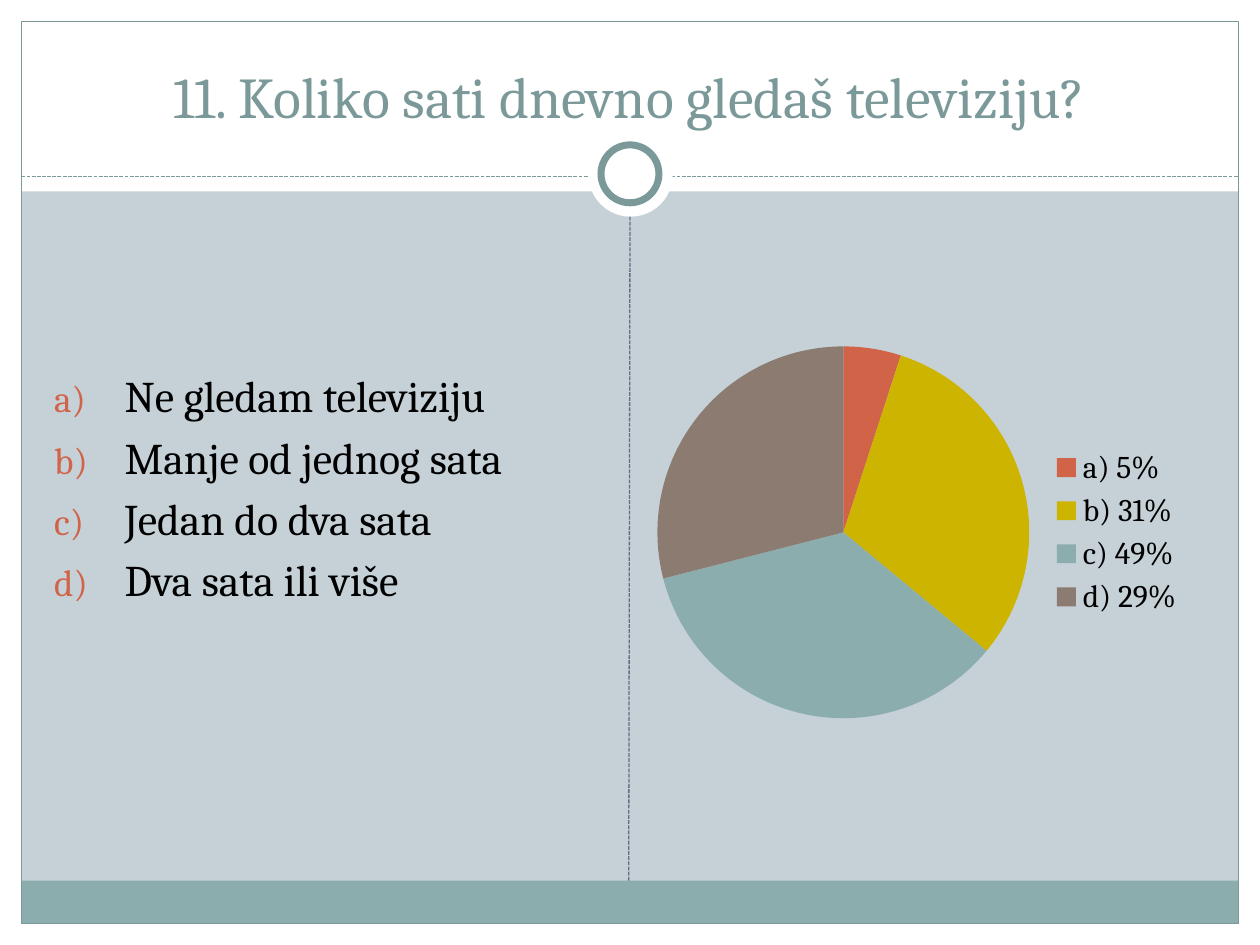
from lxml.etree import SubElement
from pptx import Presentation
from pptx.chart.data import CategoryChartData
from pptx.dml.color import RGBColor
from pptx.enum.chart import XL_CHART_TYPE as ChartType, XL_LEGEND_POSITION as LegendPosition
from pptx.enum.dml import MSO_LINE
from pptx.enum.shapes import MSO_CONNECTOR, MSO_SHAPE as Shape
from pptx.enum.text import MSO_ANCHOR, MSO_AUTO_SIZE, PP_ALIGN
from pptx.oxml.ns import qn
from pptx.util import Inches, Pt

WHITE = RGBColor(0xFF, 0xFF, 0xFF)
BLACK = RGBColor(0x00, 0x00, 0x00)
BACKGROUND = RGBColor(0xC5, 0xD1, 0xD7)
TEAL = RGBColor(0x8C, 0xAD, 0xAE)
DARK_TEAL = RGBColor(0x7C, 0x99, 0x9A)
SLATE = RGBColor(0x64, 0x6B, 0x86)
RED = RGBColor(0xD1, 0x63, 0x49)
YELLOW = RGBColor(0xCC, 0xB4, 0x00)
BROWN = RGBColor(0x8C, 0x7B, 0x70)
FONT = "Cambria"

TITLE = "11. Koliko sati dnevno gledaš televiziju?"
ANSWERS = ["Ne gledam televiziju", "Manje od jednog sata", "Jedan do dva sata", "Dva sata ili više"]
SLICES = [("a) 5%", 5, RED), ("b) 31%", 31, YELLOW), ("c) 49%", 35, TEAL), ("d) 29%", 29, BROWN)]

WIDTH, HEIGHT, MARGIN = 10, 7.5, 0.17
INNER_WIDTH = WIDTH - 2 * MARGIN
FOOTER_TOP, RULE_TOP = 6.99, 1.4
BOTTOM = HEIGHT - MARGIN

FRAME = [
    (Shape.RECTANGLE, (0, BOTTOM, WIDTH, MARGIN), WHITE, None, 0),
    (Shape.RECTANGLE, (0, 0, WIDTH, 1.52), WHITE, None, 0),
    (Shape.RECTANGLE, (0, 0, MARGIN, HEIGHT), WHITE, None, 0),
    (Shape.RECTANGLE, (WIDTH - MARGIN, 0, MARGIN, HEIGHT), WHITE, None, 0),
    (Shape.RECTANGLE, (MARGIN, FOOTER_TOP, INNER_WIDTH, BOTTOM - FOOTER_TOP), TEAL, None, 0),
    (Shape.RECTANGLE, (MARGIN, MARGIN, INNER_WIDTH, BOTTOM - MARGIN), None, DARK_TEAL, 0.75),
]
RING = [
    (Shape.OVAL, (4.67, 1.05, 0.67, 0.67), WHITE, None, 0),
    (Shape.OVAL, (4.77, 1.15, 0.46, 0.46), WHITE, DARK_TEAL, 4),
]


def place(box, area):
    for name, value in zip(("left", "top", "width", "height"), area):
        setattr(box, name, Inches(value))


def set_font(font, size, color):
    for name, value in {"name": FONT, "size": Pt(size), "bold": False}.items():
        setattr(font, name, value)
    font.color.rgb = color


def add_block(page, kind, area, fill, line, weight):
    block = page.shapes.add_shape(kind, *map(Inches, area))
    block.shadow.inherit = False
    if fill is None:
        block.fill.background()
    else:
        block.fill.solid()
        block.fill.fore_color.rgb = fill
    if line is None:
        block.line.fill.background()
    else:
        block.line.color.rgb = line
        block.line.width = Pt(weight)


def add_dashed_line(page, ends, color):
    rule = page.shapes.add_connector(MSO_CONNECTOR.STRAIGHT, *map(Inches, ends))
    rule.line.color.rgb = color
    rule.line.width = Pt(0.75)
    rule.line.dash_style = MSO_LINE.SQUARE_DOT
    SubElement(rule.element.spPr, qn("a:effectLst"))


def write_lines(box, lines, anchor, align, size, color):
    frame = box.text_frame
    frame.text = "\n".join(lines)
    for name, value in {"word_wrap": True, "auto_size": MSO_AUTO_SIZE.NONE, "vertical_anchor": anchor}.items():
        setattr(frame, name, value)
    for para in frame.paragraphs:
        para.alignment = align
        for span in para.runs:
            set_font(span.font, size, color)


def add_letter(para):
    para.space_before = Pt(5)
    properties = para._p.get_or_add_pPr()
    properties.set("marL", str(Inches(0.56)))
    properties.set("indent", str(-Inches(0.56)))
    bullet_color = SubElement(properties, qn("a:buClr"))
    SubElement(bullet_color, qn("a:srgbClr"), val=str(RED))
    SubElement(properties, qn("a:buSzPct"), val="85000")
    SubElement(properties, qn("a:buFont"), typeface=FONT)
    SubElement(properties, qn("a:buAutoNum"), type="alphaLcParenR")


def add_pie(page, area):
    data = CategoryChartData()
    data.categories = [label for label, _, _ in SLICES]
    data.add_series("Series 1", [value for _, value, _ in SLICES])
    chart = page.shapes.add_chart(ChartType.PIE, *map(Inches, area), data).chart
    chart.has_title = False
    set_font(chart.font, 18, BLACK)
    chart.has_legend = True
    chart.legend.position = LegendPosition.RIGHT
    chart.legend.include_in_layout = False
    plot = chart.plots[0]
    plot.vary_by_categories = True
    for index, (_, _, color) in enumerate(SLICES):
        fill = plot.series[0].points[index].format.fill
        fill.solid()
        fill.fore_color.rgb = color


def main():
    deck = Presentation()
    deck.slide_width, deck.slide_height = Inches(WIDTH), Inches(HEIGHT)
    page = deck.slides.add_slide(deck.slide_layouts[1])
    page.background.fill.solid()
    page.background.fill.fore_color.rgb = BACKGROUND

    for block in FRAME:
        add_block(page, *block)
    add_dashed_line(page, (MARGIN, RULE_TOP, WIDTH - MARGIN, RULE_TOP), DARK_TEAL)
    for block in RING:
        add_block(page, *block)
    add_dashed_line(page, (4.99, FOOTER_TOP, 5, 1.72), SLATE)

    title, body = page.placeholders
    place(title, (0.33, 0.25, 9.33, 0.83))
    write_lines(title, [TITLE], MSO_ANCHOR.BOTTOM, PP_ALIGN.CENTER, 33, DARK_TEAL)
    place(body, (0.33, 2.88, 4.42, 3.74))
    write_lines(body, ANSWERS, MSO_ANCHOR.TOP, PP_ALIGN.LEFT, 25, BLACK)
    for para in body.text_frame.paragraphs:
        add_letter(para)
    for box in (title, body):
        page.shapes.element.append(box.element)

    add_pie(page, (5.08, 1.75, 4.42, 4.95))
    deck.save("out.pptx")


if __name__ == "__main__":
    main()
